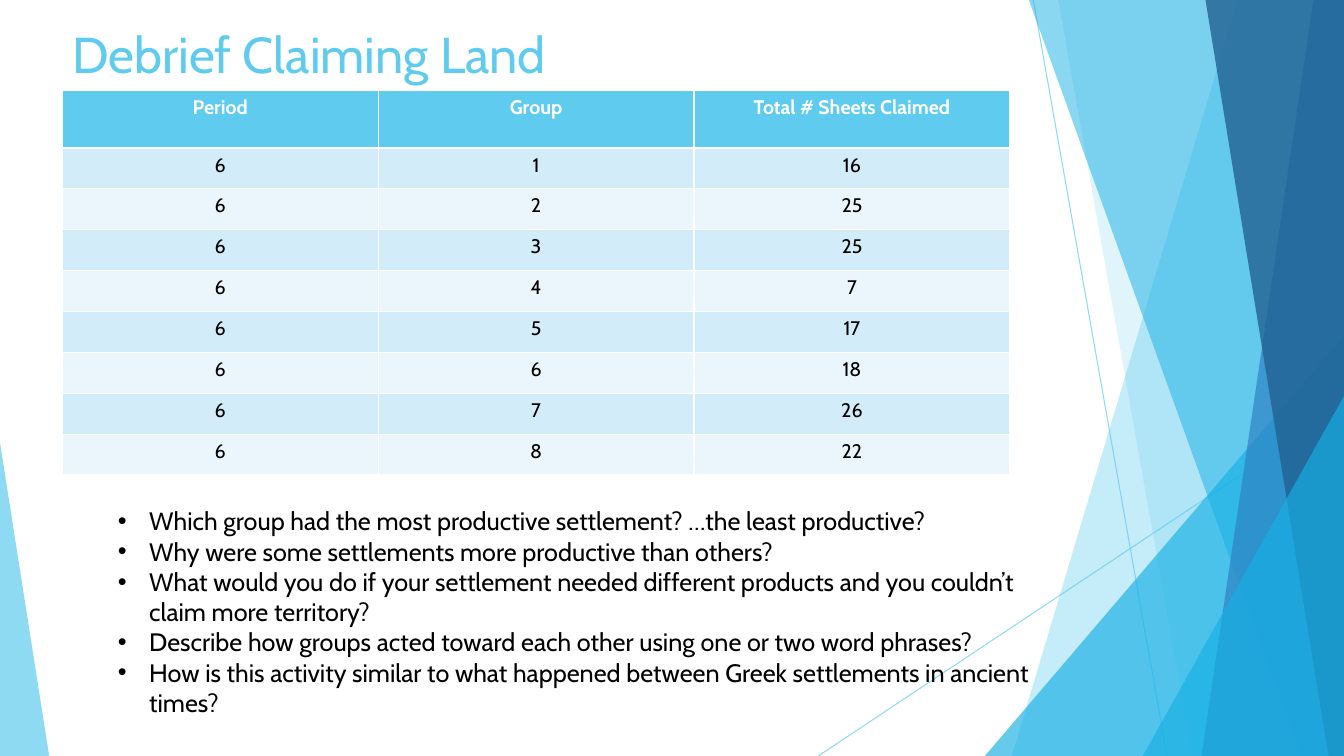
import pptx
import pptx.util
import pptx.dml.color
import pptx.enum.shapes
import pptx.enum.text
import pptx.oxml.ns
import lxml.etree

Cm = pptx.util.Cm
Pt = pptx.util.Pt
qn = pptx.oxml.ns.qn
MSO_SHAPE = pptx.enum.shapes.MSO_SHAPE
ANCHOR = pptx.enum.text.MSO_ANCHOR
ALIGN = pptx.enum.text.PP_ALIGN

WIDTH, HEIGHT = 33.87, 19.05
SKY, AZURE, BLUE, NAVY = "5FCBEF", "17B0E4", "2E83C3", "226292"
ROW_FILLS = ("D2ECF9", "EAF6FC")
HEADERS = ("Period", "Group", "Total # Sheets Claimed")
SHEETS_CLAIMED = (16, 25, 25, 7, 17, 18, 26, 22)
QUESTIONS = (
    "Which group had the most productive settlement? …the least productive?",
    "Why were some settlements more productive than others?",
    "What would you do if your settlement needed different products and you couldn’t claim more territory?",
    "Describe how groups acted toward each other using one or two word phrases?",
    "How is this activity similar to what happened between Greek settlements in ancient times?",
)


def set_color(fill, color, opacity=100):
    fill.solid()
    fill.fore_color.rgb = pptx.dml.color.RGBColor.from_string(color)
    if opacity < 100:
        clr = next(fill._xPr.iter(qn("a:srgbClr")))
        lxml.etree.SubElement(clr, qn("a:alpha"), val=str(opacity * 1000))


def style_shape(sp, color, opacity):
    sp.shadow.inherit = False
    set_color(sp.fill, color, opacity)
    sp.line.fill.background()


def style_text(p, text, size, color, bold=False):
    p.text = text
    p.font.name = "Cabin"
    p.font.size = Pt(size)
    p.font.bold = bold
    set_color(p.font.fill, color)


def add_line(s, x1, y1, x2, y2):
    sp = s.shapes.add_connector(
        pptx.enum.shapes.MSO_CONNECTOR.STRAIGHT, Cm(x1), Cm(y1), Cm(x2), Cm(y2))
    sp.line.width = Pt(0.75)
    set_color(sp.line.fill, SKY, 70)
    lxml.etree.SubElement(sp._element.spPr, qn("a:effectLst"))


def add_band(s, top_x, bottom_x, color, opacity):
    builder = s.shapes.build_freeform(Cm(top_x), 0)
    corners = ((WIDTH, 0), (WIDTH, HEIGHT), (bottom_x, HEIGHT))
    builder.add_line_segments([(Cm(x), Cm(y)) for x, y in corners], close=True)
    style_shape(builder.convert_to_shape(), color, opacity)


def add_triangle(s, left, top, width, apex, color, opacity):
    sp = s.shapes.add_shape(
        MSO_SHAPE.ISOSCELES_TRIANGLE, Cm(left), Cm(top), Cm(width), Cm(HEIGHT - top))
    sp.adjustments[0] = apex
    style_shape(sp, color, opacity)


def add_background(s):
    add_line(s, 26.04, 0, 29.41, HEIGHT)
    add_line(s, WIDTH, 10.24, 20.62, HEIGHT)
    add_band(s, 31.19, 25.5, SKY, 36)
    add_band(s, 26.67, 30.05, SKY, 20)
    add_triangle(s, 24.82, 8.46, 9.05, 1, AZURE, 66)
    add_band(s, 25.93, 32.79, AZURE, 50)
    add_band(s, 33.1, 30.28, BLUE, 70)
    add_band(s, 30.38, 33.48, NAVY, 80)
    add_triangle(s, 28.8, 9.98, 5.07, 1, AZURE, 66)
    add_triangle(s, 0, 11.15, 1.24, 0, SKY, 70)


def add_text_box(s, left, top, width, height):
    tf = s.shapes.add_textbox(Cm(left), Cm(top), Cm(width), Cm(height)).text_frame
    tf.word_wrap = True
    return tf


def add_title(s, text):
    tf = add_text_box(s, 1.57, 0.38, 23.88, 1.91)
    tf.vertical_anchor = ANCHOR.MIDDLE
    style_text(tf.paragraphs[0], text, 36, SKY)


def add_claims_table(s):
    rows = [HEADERS]
    rows += [(6, group, sheets) for group, sheets in enumerate(SHEETS_CLAIMED, 1)]
    table = s.shapes.add_table(
        len(rows), len(HEADERS), Cm(1.57), Cm(2.29), Cm(23.88), Cm(9.68)).table
    for i, values in enumerate(rows):
        header = i == 0
        table.rows[i].height = Cm(1.44 if header else 1.03)
        for cell, value in zip(table.rows[i].cells, values):
            set_color(cell.fill, SKY if header else ROW_FILLS[(i - 1) % 2])
            p = cell.text_frame.paragraphs[0]
            p.alignment = ALIGN.CENTER
            style_text(p, str(value), 14, "FFFFFF" if header else "000000", header)


def add_questions(s):
    tf = add_text_box(s, 2.72, 12.62, 23.52, 5.64)
    for i, question in enumerate(QUESTIONS):
        p = tf.add_paragraph() if i else tf.paragraphs[0]
        style_text(p, question, 18, "000000")
        pPr = p._p.get_or_add_pPr()
        pPr.set("marL", str(Cm(0.79)))
        pPr.set("indent", str(-Cm(0.79)))
        bullet_font = lxml.etree.Element(qn("a:buFont"), typeface="Arial")
        bullet = lxml.etree.Element(qn("a:buChar"), char="•")
        pPr.insert(0, bullet_font)
        pPr.insert(1, bullet)


def main():
    prs = pptx.Presentation()
    prs.slide_width, prs.slide_height = Cm(WIDTH), Cm(HEIGHT)
    s = prs.slides.add_slide(prs.slide_layouts[6])
    add_background(s)
    add_title(s, "Debrief Claiming Land")
    add_claims_table(s)
    add_questions(s)
    prs.save("out.pptx")


if __name__ == "__main__":
    main()
